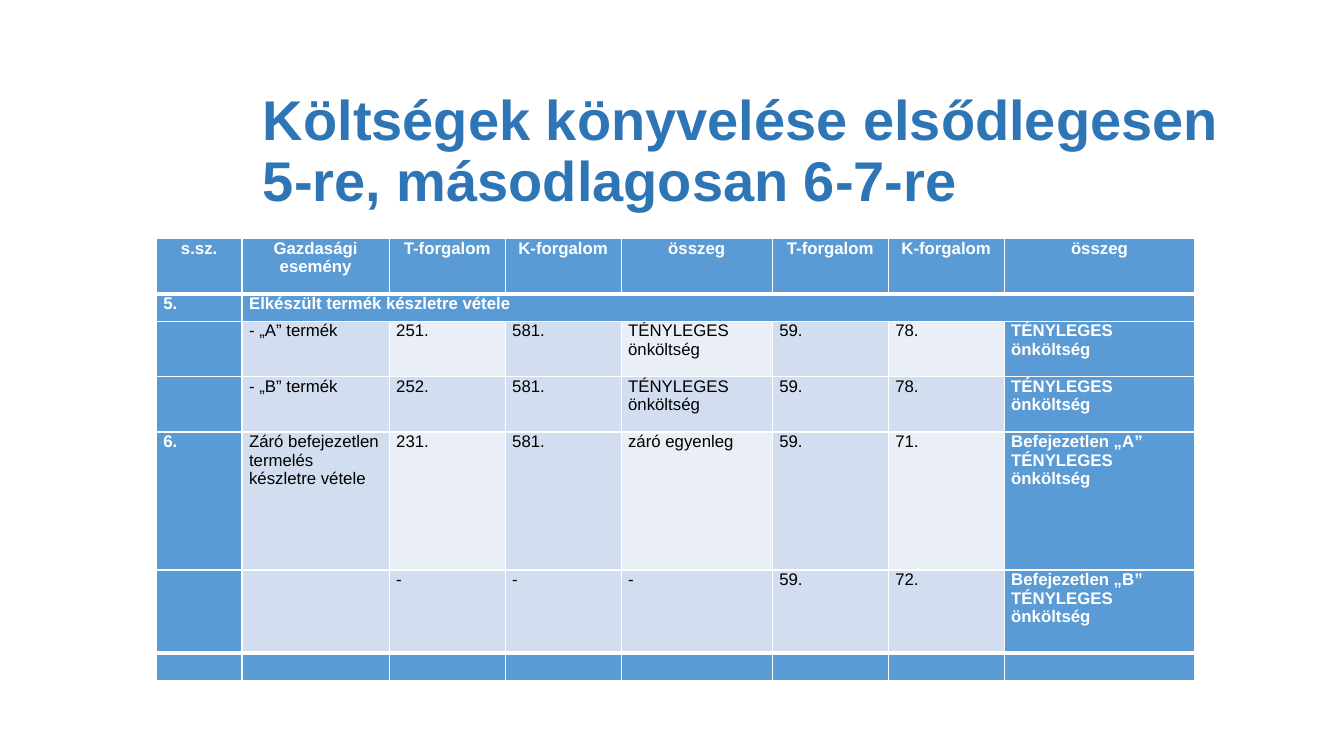
from dataclasses import dataclass

import lxml.etree
import pptx
import pptx.dml.color
import pptx.enum.text
import pptx.oxml.ns
import pptx.util

COLORS = {
    "title": "2E75B6",
    "accent": "5B9BD5",
    "band": "D2DEEF",
    "light": "EAEFF7",
    "white": "FFFFFF",
    "black": "000000",
}
FONT = "Arial"
SLIDE_W, SLIDE_H = pptx.util.Inches(13.33), pptx.util.Inches(7.5)


def across(percent: float) -> int:
    return round(SLIDE_W * percent / 100)


def down(percent: float) -> int:
    return round(SLIDE_H * percent / 100)


@dataclass(frozen=True)
class Box:
    left: float
    top: float
    width: float
    height: float

    def emu(self) -> tuple[int, int, int, int]:
        return across(self.left), down(self.top), across(self.width), down(self.height)


@dataclass(frozen=True)
class Row:
    lines: int
    texts: tuple[str, ...]


@dataclass(frozen=True)
class CellStyle:
    fill: str
    color: str
    bold: bool
    centered: bool
    top: int
    bottom: int


COL_WIDTHS = (6.38, 10.95, 8.63, 8.63, 11.25, 8.63, 8.63, 14.18)
LINE_HEIGHT = 3.65
ACTUAL = "TÉNYLEGES önköltség"
ROWS = (
    Row(2, ("s.sz.", "Gazdasági esemény", "T-forgalom", "K-forgalom", "összeg",
            "T-forgalom", "K-forgalom", "összeg")),
    Row(1, ("5.", "Elkészült termék készletre vétele")),
    Row(2, ("", "- „A” termék", "251.", "581.", ACTUAL, "59.", "78.", ACTUAL)),
    Row(2, ("", "- „B” termék", "252.", "581.", ACTUAL, "59.", "78.", ACTUAL)),
    Row(5, ("6.", "Záró befejezetlen termelés készletre vétele", "231.", "581.",
            "záró egyenleg", "59.", "71.", "Befejezetlen „A”\n" + ACTUAL)),
    Row(3, ("", "", "-", "-", "-", "59.", "72.", "Befejezetlen „B”\n" + ACTUAL)),
    Row(1, ("",) * len(COL_WIDTHS)),
)
TITLE_BOX = Box(18.83, 14.4, 74.87, 11.6)
TABLE_BOX = Box(11.63, 31.6, sum(COL_WIDTHS), LINE_HEIGHT * sum(row.lines for row in ROWS))
SPANNED_ROW = 1


def rgb(name: str) -> pptx.dml.color.RGBColor:
    return pptx.dml.color.RGBColor.from_string(COLORS[name])


def format_runs(p, size: int, color: str, bold: bool) -> None:
    for r in p.runs:
        r.font.name = FONT
        r.font.size = pptx.util.Pt(size)
        r.font.bold = bold
        r.font.color.rgb = rgb(color)


def cell_style(row: int, col: int) -> CellStyle:
    last_row, last_col = len(ROWS) - 1, len(COL_WIDTHS) - 1
    accent = row in (0, SPANNED_ROW, last_row) or col in (0, last_col)
    striped = row % 2 == 0 and col % 2 == 0
    return CellStyle(
        fill="accent" if accent else "light" if striped else "band",
        color="white" if accent else "black",
        bold=accent,
        centered=row == 0,
        top=3 if row in (1, last_row) else 1,
        bottom=3 if row in (0, last_row - 1) else 1,
    )


def set_borders(cell, style: CellStyle) -> None:
    tc_pr = cell._tc.get_or_add_tcPr()
    qn = pptx.oxml.ns.qn
    for side, width in (("L", 1), ("R", 1), ("T", style.top), ("B", style.bottom)):
        ln = lxml.etree.SubElement(tc_pr, qn(f"a:ln{side}"), w=str(pptx.util.Pt(width)))
        fill = lxml.etree.SubElement(ln, qn("a:solidFill"))
        lxml.etree.SubElement(fill, qn("a:srgbClr"), val=COLORS["white"])


def fill_cell(cell, text: str, style: CellStyle) -> None:
    cell.margin_left = cell.margin_right = pptx.util.Inches(0.07)
    cell.margin_top = cell.margin_bottom = 0
    set_borders(cell, style)
    cell.fill.solid()
    cell.fill.fore_color.rgb = rgb(style.fill)
    p = cell.text_frame.paragraphs[0]
    if style.centered:
        p.alignment = pptx.enum.text.PP_ALIGN.CENTER
    if text:
        p.text = text
        format_runs(p, 12, style.color, style.bold)
    else:
        lxml.etree.SubElement(p._p, pptx.oxml.ns.qn("a:endParaRPr"), sz="1200")


def add_title(slide, text: str) -> None:
    tf = slide.shapes.add_textbox(*TITLE_BOX.emu()).text_frame
    tf.word_wrap = True
    tf.vertical_anchor = pptx.enum.text.MSO_ANCHOR.MIDDLE
    tf.text = text
    p = tf.paragraphs[0]
    p.line_spacing = 0.9
    format_runs(p, 40, "title", True)


def add_ledger(slide) -> None:
    table = slide.shapes.add_table(len(ROWS), len(COL_WIDTHS), *TABLE_BOX.emu()).table
    table.first_row = table.horz_banding = False
    for column, width in zip(table.columns, COL_WIDTHS):
        column.width = across(width)
    for i, row in enumerate(ROWS):
        table.rows[i].height = down(row.lines * LINE_HEIGHT)
        for j in range(len(COL_WIDTHS)):
            text = row.texts[j] if j < len(row.texts) else ""
            fill_cell(table.cell(i, j), text, cell_style(i, j))
    table.cell(SPANNED_ROW, 1).merge(table.cell(SPANNED_ROW, len(COL_WIDTHS) - 1))


def main() -> None:
    prs = pptx.Presentation()
    prs.slide_width, prs.slide_height = SLIDE_W, SLIDE_H
    slide = prs.slides.add_slide(prs.slide_layouts[6])
    add_title(slide, "Költségek könyvelése elsődlegesen 5-re, másodlagosan 6-7-re")
    add_ledger(slide)
    prs.save("out.pptx")


if __name__ == "__main__":
    main()
